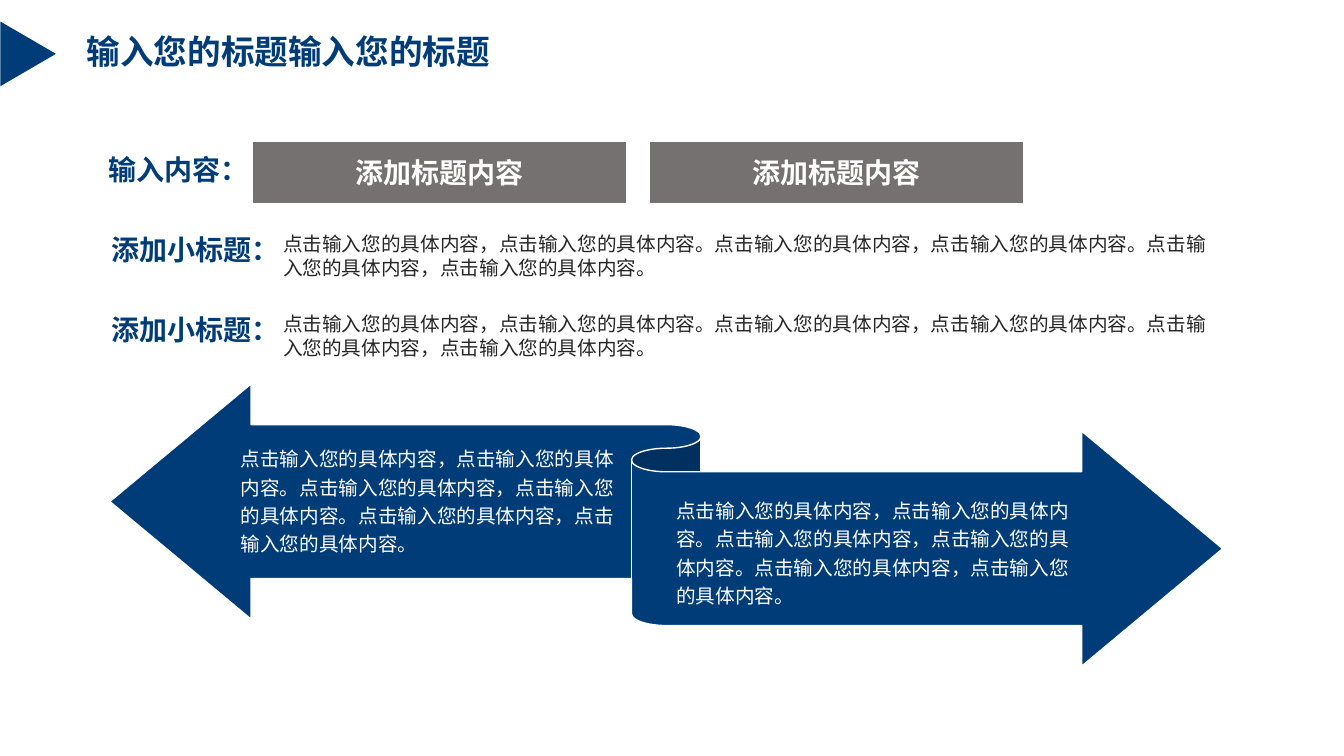
from lxml import etree
from pptx import Presentation
from pptx.dml.color import RGBColor
from pptx.enum.shapes import MSO_SHAPE
from pptx.enum.text import MSO_ANCHOR, MSO_AUTO_SIZE, PP_ALIGN
from pptx.oxml.ns import qn
from pptx.util import Pt

TRIANGLE = MSO_SHAPE.ISOSCELES_TRIANGLE
RECTANGLE = MSO_SHAPE.RECTANGLE
RIBBON = MSO_SHAPE.LEFT_RIGHT_RIBBON
TOP, MIDDLE = MSO_ANCHOR.TOP, MSO_ANCHOR.MIDDLE
LEFT, CENTER = PP_ALIGN.LEFT, PP_ALIGN.CENTER
NO_FIT = MSO_AUTO_SIZE.NONE

FONT = "Noto Sans CJK JP"
COLORS = {"navy": "003C78", "gray": "767171", "ink": "262626", "white": "FFFFFF"}
TITLE_LAYOUT = 5
BODY = ("点击输入您的具体内容，点击输入您的具体内容。"
        "点击输入您的具体内容，点击输入您的具体内容。"
        "点击输入您的具体内容，点击输入您的具体内容。")


class SlideBuilder:
    def __init__(self, prs):
        self.s = prs.slides.add_slide(prs.slide_layouts[TITLE_LAYOUT])

    def color(self, name):
        return RGBColor.from_string(COLORS[name])

    def set_text(self, sp, text, size, color, bold=False, align=LEFT,
                 anchor=MIDDLE, wrap=True, leading=None):
        """Fill a shape with one formatted paragraph; leading is in points."""
        tf = sp.text_frame
        tf.auto_size = NO_FIT
        tf.word_wrap = wrap
        tf.vertical_anchor = anchor
        p = tf.paragraphs[0]
        p.alignment = align
        if leading:
            p.line_spacing = Pt(leading)
        r = p.add_run()
        r.text = text
        r.font.size = Pt(size)
        r.font.bold = bold
        r.font.color.rgb = self.color(color)
        r.font.name = FONT
        ea = etree.SubElement(r._r.get_or_add_rPr(), qn("a:ea"))
        ea.set("typeface", FONT)

    def title(self, text, x, y, w, h):
        sp = self.s.shapes.title
        sp.left, sp.top, sp.width, sp.height = Pt(x), Pt(y), Pt(w), Pt(h)
        self.set_text(sp, text, 24, "navy", bold=True, wrap=False)

    def label(self, text, x, y, w, h):
        sp = self.s.shapes.add_textbox(Pt(x), Pt(y), Pt(w), Pt(h))
        self.set_text(sp, text, 20, "navy", bold=True, wrap=False)

    def body(self, x, y, w, h, color, leading):
        sp = self.s.shapes.add_textbox(Pt(x), Pt(y), Pt(w), Pt(h))
        self.set_text(sp, BODY, 14, color, anchor=TOP, leading=leading)

    def shape(self, kind, x, y, w, h, fill, outlined=True):
        sp = self.s.shapes.add_shape(kind, Pt(x), Pt(y), Pt(w), Pt(h))
        sp.shadow.inherit = False
        sp.fill.solid()
        sp.fill.fore_color.rgb = self.color(fill)
        if outlined:
            sp.line.color.rgb = self.color("white")
            sp.line.width = Pt(1)
        else:
            sp.line.fill.background()
        return sp

    def button(self, text, x, y, w, h):
        sp = self.shape(RECTANGLE, x, y, w, h, "gray")
        self.set_text(sp, text, 20, "white", bold=True, align=CENTER)


def main():
    prs = Presentation()
    prs.slide_width, prs.slide_height = Pt(960), Pt(540)
    b = SlideBuilder(prs)

    b.title("输入您的标题输入您的标题", 54.7, 18.5, 305.3, 36)
    marker = b.shape(TRIANGLE, -2.9, 18.7, 46.1, 39.6, "navy", outlined=False)
    marker.rotation = 90

    b.label("输入内容：", 70.6, 106, 104.4, 29.5)
    for x in (180, 463.7):
        b.button("添加标题内容", x, 100.8, 267.8, 44.6)

    for row in range(2):
        y = 162.2 + row * 57.2
        b.label("添加小标题：", 72.7, y, 133.2, 31.7)
        b.body(195.1, y, 679, 41, "ink", 16.9)

    ribbon = b.shape(RIBBON, 78.5, 274.3, 794.9, 201.6, "navy")
    for i, value in enumerate((0.545, 0.5, 0.167)):
        ribbon.adjustments[i] = value
    for x, y, w in ((164.9, 312.6, 285.8), (475.9, 349.4, 295.9)):
        b.body(x, y, w, 87.8, "white", 20.2)

    prs.save("out.pptx")


if __name__ == "__main__":
    main()
